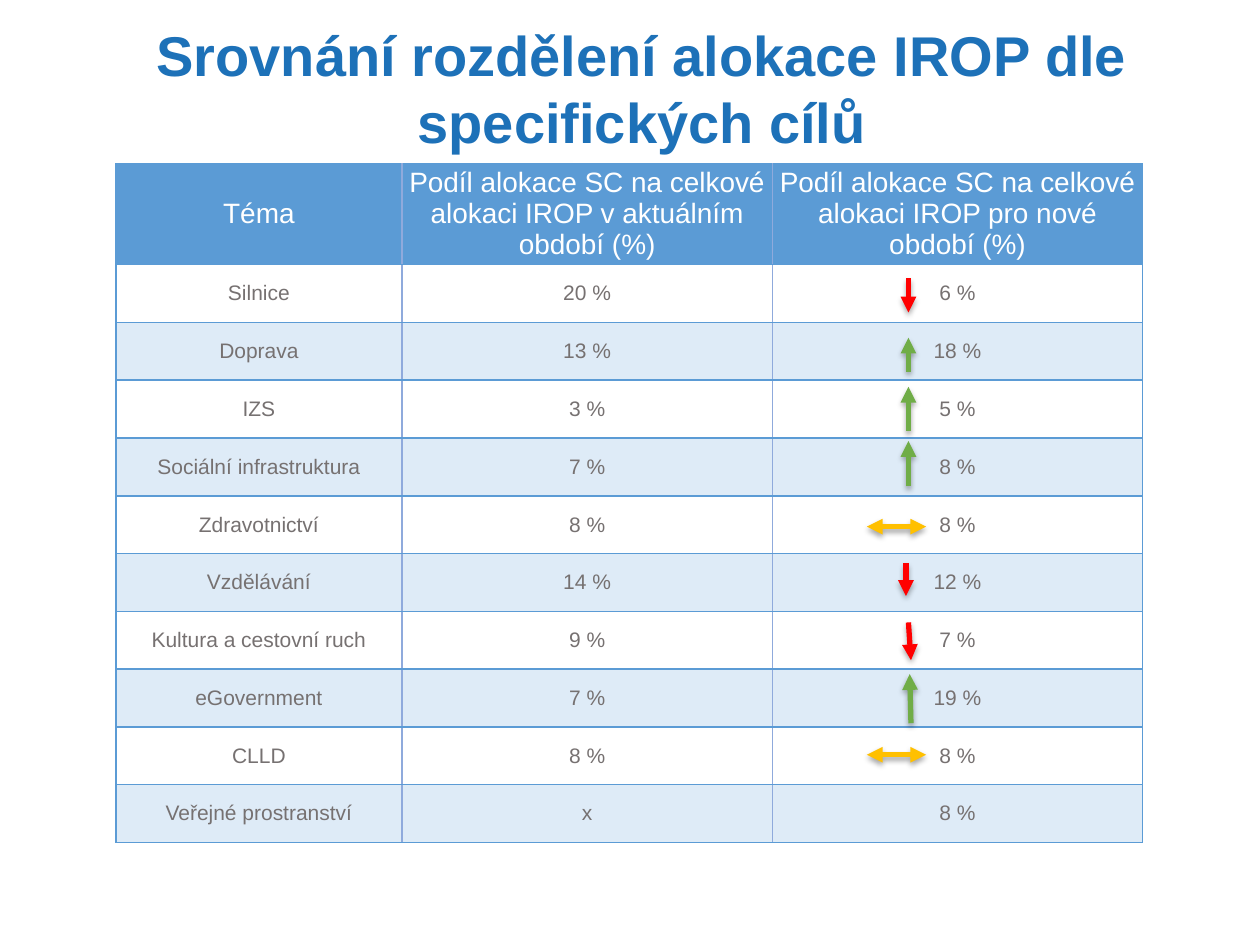
from lxml.etree import SubElement
from pptx import Presentation
from pptx.dml.color import RGBColor
from pptx.enum.shapes import MSO_CONNECTOR
from pptx.enum.text import MSO_ANCHOR, MSO_AUTO_SIZE, PP_ALIGN
from pptx.oxml import parse_xml
from pptx.oxml.ns import nsdecls, qn
from pptx.util import Inches, Pt

TITLE = "Srovnání rozdělení alokace IROP dle specifických cílů"
HEADER = (
    "Téma",
    "Podíl alokace SC na celkové alokaci IROP v aktuálním období (%)",
    "Podíl alokace SC na celkové alokaci IROP pro nové období (%)",
)
ROWS = [
    ("Silnice", "20 %", "6 %"),
    ("Doprava", "13 %", "18 %"),
    ("IZS", "3 %", "5 %"),
    ("Sociální infrastruktura", "7 %", "8 %"),
    ("Zdravotnictví", "8 %", "8 %"),
    ("Vzdělávání", "14 %", "12 %"),
    ("Kultura a cestovní ruch", "9 %", "7 %"),
    ("eGovernment", "7 %", "19 %"),
    ("CLLD", "8 %", "8 %"),
    ("Veřejné prostranství", "x", "8 %"),
]

FONT = "Arial"
BLUE, INNER_LINE, BAND = "5B9BD5", "8FAADC", "DEEBF7"
TREND_COLORS = {"down": "FF0000", "up": "70AD47", "same": "FFC000"}
# Trend, start point, end point
TRENDS = [
    ("down", (7.21, 2.21), (7.21, 2.48)),
    ("up", (7.21, 2.95), (7.21, 2.68)),
    ("up", (7.21, 3.42), (7.21, 3.07)),
    ("up", (7.21, 3.86), (7.21, 3.5)),
    ("same", (7.35, 4.18), (6.88, 4.18)),
    ("down", (7.19, 4.47), (7.19, 4.73)),
    ("down", (7.21, 4.94), (7.23, 5.24)),
    ("up", (7.23, 5.74), (7.22, 5.35)),
    ("same", (7.35, 5.99), (6.88, 5.99)),
]

LEFT, TOP, HEIGHT = 0.92, 1.3, 5.39
COLUMN_WIDTHS = (2.27, 2.94, 2.94)
HEADER_HEIGHT = 0.8
ROW_HEIGHT = (HEIGHT - HEADER_HEIGHT) / len(ROWS)


def color(value):
    return RGBColor.from_string(value)


def write(text_frame, text, size, text_color, bold=False):
    paragraph = text_frame.paragraphs[0]
    paragraph.alignment = PP_ALIGN.CENTER
    run = paragraph.add_run()
    run.text = text
    run.font.name = FONT
    run.font.size = Pt(size)
    run.font.bold = bold
    run.font.color.rgb = color(text_color)


def set_borders(cell, sides):
    properties = cell._tc.get_or_add_tcPr()
    for position, (side, line_color) in enumerate(sides.items()):
        properties.insert(position, parse_xml(
            f'<a:{side} {nsdecls("a")} w="12700"><a:solidFill>'
            f'<a:srgbClr val="{line_color}"/></a:solidFill></a:{side}>'))


def add_trend(slide, trend, start, end):
    arrow = slide.shapes.add_connector(
        MSO_CONNECTOR.STRAIGHT, *(Inches(value) for value in start + end))
    arrow.line.color.rgb = color(TREND_COLORS[trend])
    arrow.line.width = Pt(3)
    line = arrow.line._get_or_add_ln()
    for tag in ("a:headEnd", "a:tailEnd") if trend == "same" else ("a:tailEnd",):
        SubElement(line, qn(tag), type="triangle")
    arrow._element.spPr.append(parse_xml(
        f'<a:effectLst {nsdecls("a")}>'
        '<a:outerShdw blurRad="40000" dist="23000" dir="5400000" rotWithShape="0">'
        '<a:srgbClr val="000000"><a:alpha val="35000"/></a:srgbClr>'
        '</a:outerShdw></a:effectLst>'))


presentation = Presentation()
presentation.slide_width, presentation.slide_height = Inches(10), Inches(7.5)
slide = presentation.slides.add_slide(presentation.slide_layouts[6])

# Title
title = slide.shapes.add_textbox(Inches(0.19), Inches(0.11), Inches(9.81), Inches(1.18))
title.text_frame.word_wrap = True
title.text_frame.auto_size = MSO_AUTO_SIZE.SHAPE_TO_FIT_TEXT
write(title.text_frame, TITLE, 32, "1D71B8", bold=True)

# Allocation table
table = slide.shapes.add_table(
    len(ROWS) + 1, len(HEADER), Inches(LEFT), Inches(TOP),
    Inches(sum(COLUMN_WIDTHS)), Inches(HEIGHT)).table
for column, width in zip(table.columns, COLUMN_WIDTHS):
    column.width = Inches(width)
for row_index, texts in enumerate([HEADER] + ROWS):
    is_header = row_index == 0
    table.rows[row_index].height = Inches(HEADER_HEIGHT if is_header else ROW_HEIGHT)
    fill = BLUE if is_header else ("FFFFFF" if row_index % 2 else BAND)
    for column_index, text in enumerate(texts):
        cell = table.cell(row_index, column_index)
        cell.vertical_anchor = MSO_ANCHOR.MIDDLE
        cell.margin_left = cell.margin_right = cell.margin_top = cell.margin_bottom = 0
        cell.fill.solid()
        cell.fill.fore_color.rgb = color(fill)
        set_borders(cell, {
            "lnL": BLUE if column_index == 0 else INNER_LINE,
            "lnR": BLUE if column_index == len(HEADER) - 1 else INNER_LINE,
            "lnT": BLUE,
            "lnB": BLUE,
        })
        write(cell.text_frame, text, 16 if is_header else 12,
              "FFFFFF" if is_header else "767171")

# Trend arrows
for trend, start, end in TRENDS:
    add_trend(slide, trend, start, end)

presentation.save("out.pptx")
